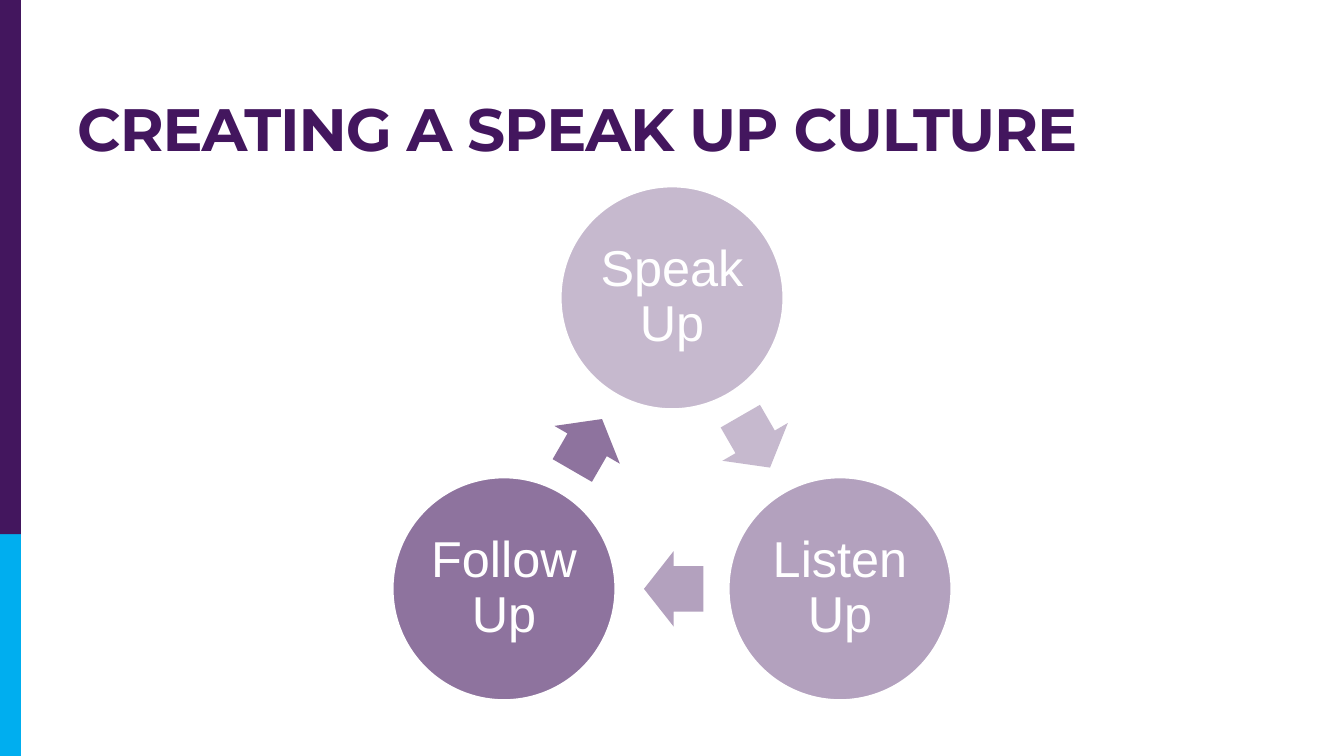
import math
from dataclasses import dataclass

import pptx
import pptx.dml.color
import pptx.enum.shapes
import pptx.enum.text
import pptx.util
from pptx.enum.shapes import MSO_SHAPE

SLIDE_WIDTH, SLIDE_HEIGHT = pptx.util.Inches(13.33), pptx.util.Inches(7.5)
COLUMNS, ROWS = 64, 36
PURPLE, CYAN, WHITE = "43165E", "00AEEF", "FFFFFF"

CYCLE_X, CYCLE_Y = 32, 23.42
STEP_SPACING = 16
STEP_DIAMETER = COLUMNS / 6
ARROW_LENGTH, ARROW_BREADTH = 2.83, 3.6
ARROW_SETBACK = 0.08


@dataclass(frozen=True)
class Step:
    label: str
    color: str


@dataclass(frozen=True)
class Band:
    top: float
    height: float
    color: str


STEPS = [
    Step("Speak Up", "C6B9CE"),
    Step("Listen Up", "B3A1BE"),
    Step("Follow Up", "8E739E"),
]
BANDS = [Band(25.44, ROWS - 25.44, CYAN), Band(0, 25.44, PURPLE)]


def rgb(color: str) -> pptx.dml.color.RGBColor:
    return pptx.dml.color.RGBColor.from_string(color)


def place(left: float, top: float, width: float, height: float) -> list[int]:
    """Turn grid columns and rows into slide lengths."""
    column, row = SLIDE_WIDTH / COLUMNS, SLIDE_HEIGHT / ROWS
    return [round(left * column), round(top * row), round(width * column), round(height * row)]


def apply_format(target: object, values: dict[str, object]) -> None:
    for name, value in values.items():
        setattr(target, name, value)


def add_filled(slide, kind: MSO_SHAPE, box: list[int], color: str):
    shape = slide.shapes.add_shape(kind, *box)
    shape.shadow.inherit = False
    shape.fill.solid()
    shape.fill.fore_color.rgb = rgb(color)
    shape.line.fill.background()
    return shape


def write(frame, text: str, color: str, frame_format: dict, paragraph_format: dict, font_format: dict):
    """Fill a text frame with one formatted run and return the run."""
    apply_format(frame, {"word_wrap": True, **frame_format})
    paragraph = frame.paragraphs[0]
    apply_format(paragraph, paragraph_format)
    run = paragraph.add_run()
    run.text = text
    apply_format(run.font, font_format)
    run.font.color.rgb = rgb(color)
    return run


def add_title(slide, text: str) -> None:
    title = slide.shapes.add_textbox(*place(3.2, 0.8, 54, 7.2))
    run = write(
        title.text_frame, text, PURPLE,
        {"vertical_anchor": pptx.enum.text.MSO_ANCHOR.BOTTOM},
        {"alignment": pptx.enum.text.PP_ALIGN.LEFT},
        {"name": "Montserrat", "size": pptx.util.Pt(42.7), "bold": True},
    )
    run.font._element.set("spc", "-80")


def add_step(slide, step: Step, x: float, y: float) -> None:
    radius = STEP_DIAMETER / 2
    circle = add_filled(
        slide, MSO_SHAPE.OVAL,
        place(x - radius, y - radius, STEP_DIAMETER, STEP_DIAMETER), step.color,
    )
    circle.line.color.rgb = rgb(WHITE)
    circle.line.width = pptx.util.Pt(2.25)
    margins = ("margin_left", "margin_top", "margin_right", "margin_bottom")
    write(
        circle.text_frame, step.label, WHITE,
        {"vertical_anchor": pptx.enum.text.MSO_ANCHOR.MIDDLE,
         **dict.fromkeys(margins, pptx.util.Inches(0.05))},
        {"alignment": pptx.enum.text.PP_ALIGN.CENTER, "line_spacing": 0.9,
         "space_after": pptx.util.Pt(12.6)},
        {"name": "Arial", "size": pptx.util.Pt(36)},
    )


def add_arrow(slide, color: str, start: tuple[float, float], end: tuple[float, float]) -> None:
    """Point an arrow from one step to the next, just short of halfway."""
    angle = math.atan2(end[1] - start[1], end[0] - start[0])
    x = (start[0] + end[0]) / 2 - ARROW_SETBACK * math.cos(angle)
    y = (start[1] + end[1]) / 2 - ARROW_SETBACK * math.sin(angle)
    box = place(x - ARROW_LENGTH / 2, y - ARROW_BREADTH / 2, ARROW_LENGTH, ARROW_BREADTH)
    arrow = add_filled(slide, MSO_SHAPE.RIGHT_ARROW, box, color)
    arrow.adjustments[0], arrow.adjustments[1] = 0.6, 0.5
    arrow.rotation = round(math.degrees(angle)) % 360


def add_cycle(slide, steps: list[Step]) -> None:
    turn = 2 * math.pi / len(steps)
    orbit = STEP_SPACING / (2 * math.sin(turn / 2))
    centers = [
        (CYCLE_X + orbit * math.sin(i * turn), CYCLE_Y - orbit * math.cos(i * turn))
        for i in range(len(steps))
    ]
    for i, step in enumerate(steps):
        add_step(slide, step, *centers[i])
        add_arrow(slide, step.color, centers[i], centers[(i + 1) % len(steps)])


def main() -> None:
    deck = pptx.Presentation()
    apply_format(deck, {"slide_width": SLIDE_WIDTH, "slide_height": SLIDE_HEIGHT})
    slide = deck.slides.add_slide(deck.slide_layouts[6])
    for band in BANDS:
        add_filled(slide, MSO_SHAPE.RECTANGLE, place(0, band.top, 1, band.height), band.color)
    add_title(slide, "CREATING A SPEAK UP CULTURE")
    add_cycle(slide, STEPS)
    deck.save("out.pptx")


if __name__ == "__main__":
    main()
